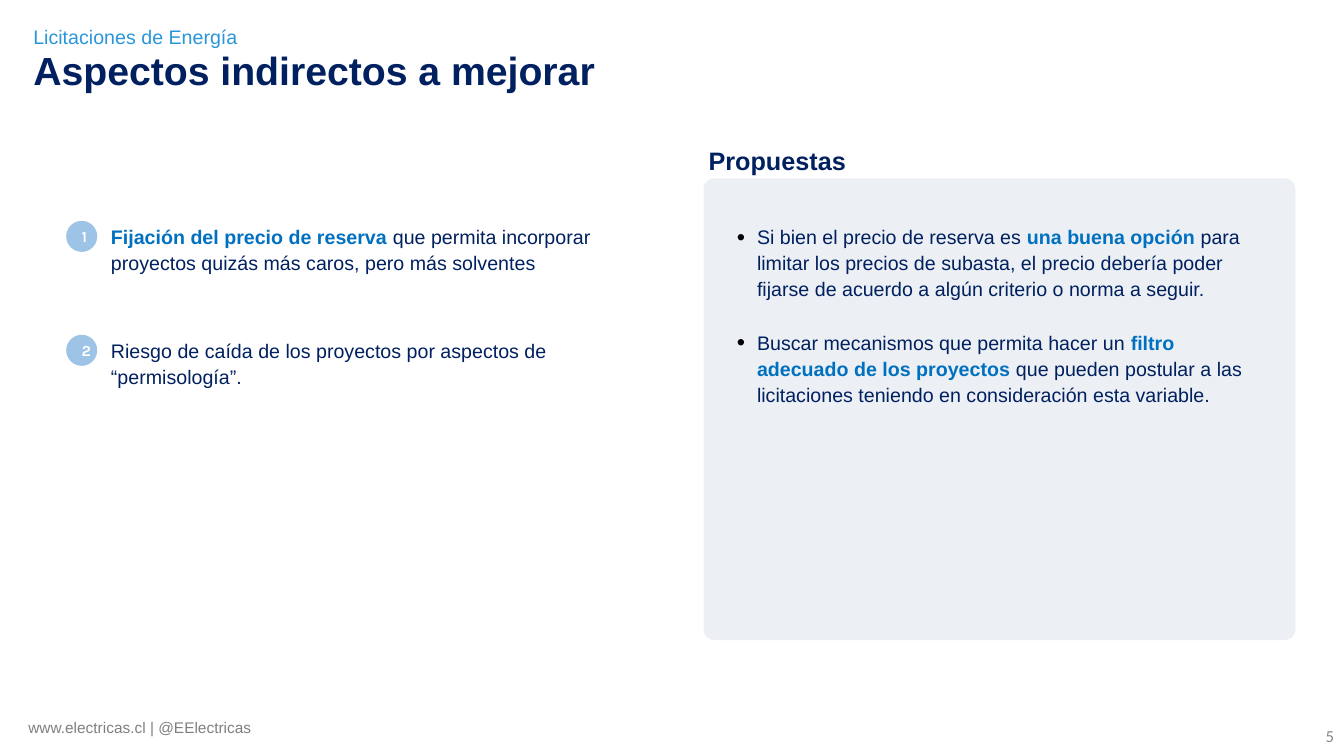
from dataclasses import dataclass

from lxml import etree
from pptx import Presentation
from pptx.dml.color import RGBColor
from pptx.enum.shapes import MSO_SHAPE
from pptx.enum.text import MSO_ANCHOR, MSO_AUTO_SIZE, PP_ALIGN
from pptx.oxml.ns import qn
from pptx.util import Inches, Pt

ROUNDED, OVAL = MSO_SHAPE.ROUNDED_RECTANGLE, MSO_SHAPE.OVAL
TOP, MIDDLE = MSO_ANCHOR.TOP, MSO_ANCHOR.MIDDLE
FIXED = MSO_AUTO_SIZE.NONE
LEFT, CENTER, RIGHT = PP_ALIGN.LEFT, PP_ALIGN.CENTER, PP_ALIGN.RIGHT
COMPARISON_LAYOUT = 4


@dataclass(frozen=True)
class Theme:
    navy: str = "002060"
    accent: str = "0070C0"
    sky: str = "2A96D9"
    badge: str = "9DC3E6"
    panel: str = "D6DCE5"
    white: str = "FFFFFF"
    bullet: str = "000000"
    footer: str = "7F7F7F"
    page: str = "888888"
    font: str = "Arial"
    badge_font: str = "Karla"
    page_font: str = "Calibri"
    title_size: int = 28
    heading_size: int = 18
    body_size: int = 14
    page_size: int = 12
    small_size: int = 11


THEME = Theme()


@dataclass(frozen=True)
class Area:
    """Left, top, width and height in percent of the slide."""
    left: float
    top: float
    width: float
    height: float


@dataclass(frozen=True)
class Span:
    text: str
    color: str = THEME.navy
    bold: bool = False
    size: int = THEME.body_size
    font: str = THEME.font


@dataclass(frozen=True)
class Style:
    margins: tuple[float, float, float, float] = (0.05, 0.05, 0.06, 0.07)
    anchor: MSO_ANCHOR = TOP
    align: PP_ALIGN = LEFT
    line_spacing: float = 1.0
    space_after: int = 0
    bulleted: bool = False


@dataclass(frozen=True)
class Item:
    holder: int
    area: Area
    spans: tuple[Span, ...]


BODY = Style(line_spacing=1.1, space_after=7)
BULLET = Style(line_spacing=1.1, space_after=7, bulleted=True)
SLIM = (0.04, 0.04, 0.04, 0.04)
WIDE = (0.1, 0.05, 0.1, 0.05)
PANEL_LEFT, COLUMN_WIDTH, FIRST_ROW = 52.35, 39.75, 28.8
POINT_LEFT, PROPOSAL_LEFT = 7.88, 54.45

POINTS = (
    Item(1, Area(POINT_LEFT, FIRST_ROW, COLUMN_WIDTH, 8.93), (
        Span("Fijación del precio de reserva ", THEME.accent, True),
        Span("que permita incorporar proyectos quizás más caros, pero más solventes"),
    )),
    Item(2, Area(POINT_LEFT, 43.87, COLUMN_WIDTH, 11.47), (
        Span("Riesgo de caída de los proyectos por aspectos de “permisología”."),
    )),
)
PROPOSALS = (
    Item(3, Area(PROPOSAL_LEFT, FIRST_ROW, COLUMN_WIDTH, 11.6), (
        Span("Si bien el precio de reserva es "),
        Span("una buena opción", THEME.accent, True),
        Span(" para limitar los precios de subasta, el precio debería poder "
             "fijarse de acuerdo a algún criterio o norma a seguir."),
    )),
    Item(4, Area(PROPOSAL_LEFT, 42.8, COLUMN_WIDTH, 20.13), (
        Span("Buscar mecanismos que permita hacer un "),
        Span("filtro adecuado de los proyectos", THEME.accent, True),
        Span(" que pueden postular a las licitaciones teniendo en "
             "consideración esta variable."),
    )),
)
LABELS = (
    (Area(2.18, 2.67, 32.93, 4.27),
     Span("Licitaciones de Energía", THEME.sky), Style(SLIM, MIDDLE)),
    (Area(1.58, 94.4, 17.78, 3.47),
     Span("www.electricas.cl | @EElectricas", THEME.footer, size=THEME.small_size),
     Style((0.07, 0.04, 0.07, 0.04))),
    (Area(PANEL_LEFT, 18.13, COLUMN_WIDTH, 5.87),
     Span("Propuestas", bold=True, size=THEME.heading_size), BODY),
    (Area(77.5, 94.67, 22.5, 5.33),
     Span("5", THEME.page, size=THEME.page_size, font=THEME.page_font),
     Style(WIDE, MIDDLE, RIGHT)),
)

deck = Presentation()
deck.slide_width, deck.slide_height = Inches(13.33), Inches(7.5)


def frame(area: Area) -> tuple[int, int, int, int]:
    across, down = deck.slide_width / 100, deck.slide_height / 100
    return (round(area.left * across), round(area.top * down),
            round(area.width * across), round(area.height * down))


def apply(target, values: dict) -> None:
    for name, value in values.items():
        setattr(target, name, value)


def place(shape, area: Area) -> None:
    apply(shape, dict(zip(("left", "top", "width", "height"), frame(area))))


def set_bullet(para, bulleted: bool) -> None:
    props = para._p.get_or_add_pPr()
    indent = Inches(0.2) if bulleted else 0
    props.set("marL", str(indent))
    props.set("indent", str(-indent))
    if not bulleted:
        etree.SubElement(props, qn("a:buNone"))
        return
    color = etree.SubElement(props, qn("a:buClr"))
    etree.SubElement(color, qn("a:srgbClr"), val=THEME.bullet)
    etree.SubElement(props, qn("a:buSzPct"), val="120000")
    etree.SubElement(props, qn("a:buFont"), typeface=THEME.font)
    etree.SubElement(props, qn("a:buChar"), char="•")


def write(shape, spans: tuple[Span, ...], style: Style) -> None:
    text = shape.text_frame
    sides = ("margin_left", "margin_top", "margin_right", "margin_bottom")
    apply(text, {"word_wrap": True, "auto_size": FIXED,
                 "vertical_anchor": style.anchor,
                 **dict(zip(sides, map(Inches, style.margins)))})
    para = text.paragraphs[0]
    set_bullet(para, style.bulleted)
    apply(para, {"alignment": style.align, "line_spacing": style.line_spacing,
                 "space_before": Pt(0), "space_after": Pt(style.space_after)})
    for span in spans:
        run = para.add_run()
        run.text = span.text
        apply(run.font, {"name": span.font, "size": Pt(span.size), "bold": span.bold})
        run.font.color.rgb = RGBColor.from_string(span.color)


def add_filled(page, kind: MSO_SHAPE, area: Area, color: str):
    shape = page.shapes.add_shape(kind, *frame(area))
    shape.shadow.inherit = False
    shape.fill.solid()
    shape.fill.fore_color.rgb = RGBColor.from_string(color)
    return shape


def add_panel(page) -> None:
    panel = add_filled(page, ROUNDED, Area(PANEL_LEFT, 23.6, 44.03, 61.07), THEME.panel)
    panel.adjustments[0] = 0.023
    panel.line.fill.background()
    color = panel._element.spPr.find(qn("a:solidFill"))[0]
    etree.SubElement(color, qn("a:alpha"), val="44000")
    page.shapes.title._element.addprevious(panel._element)


def add_badge(page, number: int, row: float) -> None:
    badge = add_filled(page, OVAL, Area(5.03, row + 0.6, 2.1, 3.73), THEME.badge)
    badge.line.color.rgb = RGBColor.from_string(THEME.badge)
    badge.line.width = Pt(2)
    digit = Span(str(number), THEME.white, True, THEME.small_size, THEME.badge_font)
    write(badge, (digit,), Style(WIDE, MIDDLE, CENTER))


def main() -> None:
    page = deck.slides.add_slide(deck.slide_layouts[COMPARISON_LAYOUT])
    add_panel(page)
    title = page.shapes.title
    place(title, Area(2.18, 5.6, 86.25, 6.67))
    heading = Span("Aspectos indirectos a mejorar", bold=True, size=THEME.title_size)
    write(title, (heading,), Style(SLIM, space_after=6))
    for items, style in ((POINTS, BODY), (PROPOSALS, BULLET)):
        for item in items:
            holder = page.placeholders[item.holder]
            place(holder, item.area)
            write(holder, item.spans, style)
    for number, point in enumerate(POINTS, start=1):
        add_badge(page, number, point.area.top)
    for area, span, style in LABELS:
        write(page.shapes.add_textbox(*frame(area)), (span,), style)
    deck.save("out.pptx")


if __name__ == "__main__":
    main()
